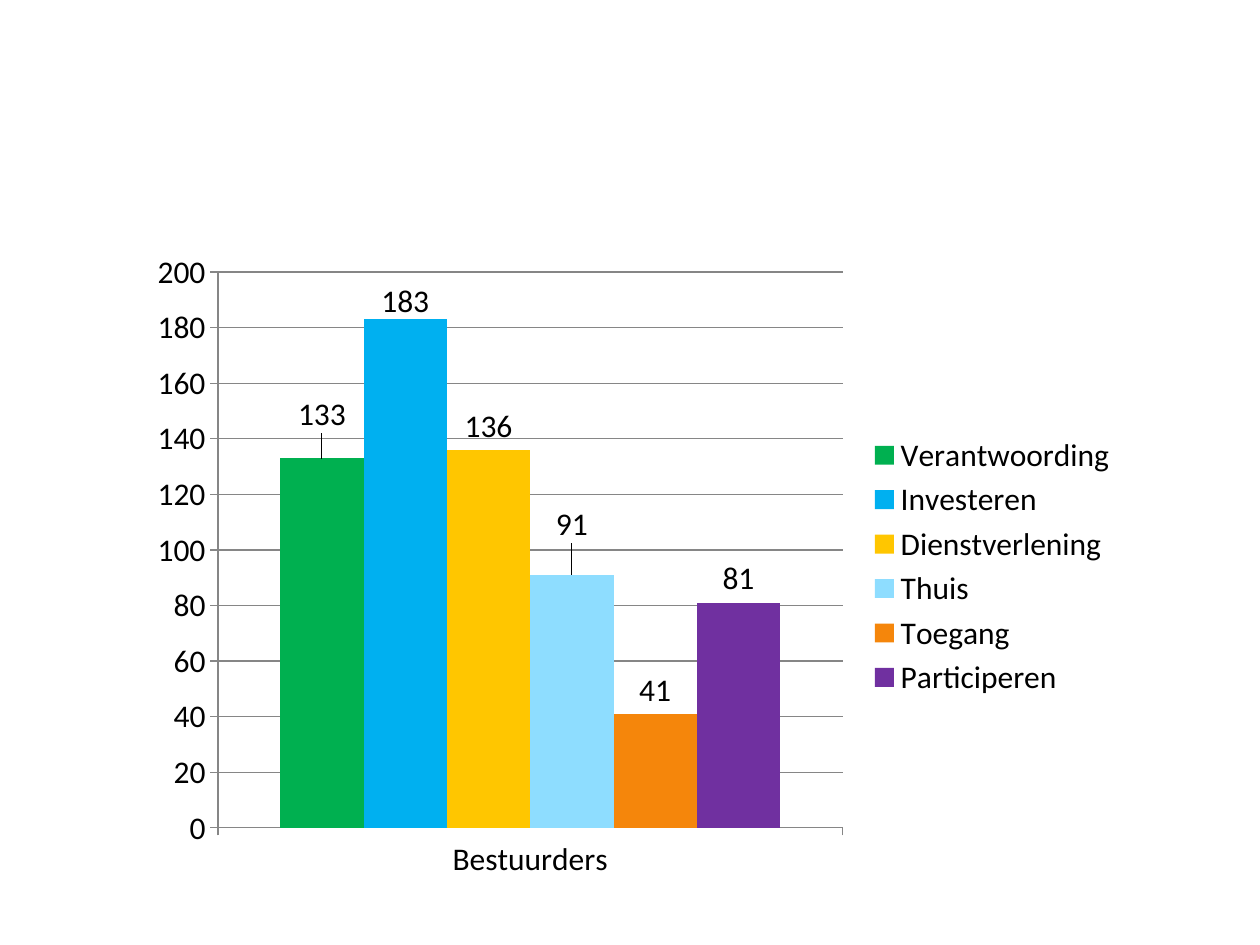
from lxml.etree import SubElement
from pptx import Presentation
from pptx.chart.data import CategoryChartData
from pptx.dml.color import RGBColor
from pptx.enum.chart import (
    XL_CHART_TYPE, XL_LABEL_POSITION, XL_LEGEND_POSITION, XL_TICK_MARK)
from pptx.oxml.ns import qn
from pptx.util import Inches, Pt

BLACK = RGBColor(0x00, 0x00, 0x00)
GRAY = RGBColor(0x86, 0x86, 0x86)
GREEN = RGBColor(0x00, 0xB0, 0x50)
BLUE = RGBColor(0x00, 0xB0, 0xF0)
YELLOW = RGBColor(0xFF, 0xC6, 0x00)
SKY = RGBColor(0x8E, 0xDD, 0xFF)
ORANGE = RGBColor(0xF5, 0x86, 0x0B)
PURPLE = RGBColor(0x70, 0x30, 0xA0)

# theme, score, bar colour, vertical label shift (share of chart height)
THEMES = [
    ("Verantwoording", 133, GREEN, -0.03),
    ("Investeren", 183, BLUE, 0.01),
    ("Dienstverlening", 136, YELLOW, 0),
    ("Thuis", 91, SKY, -0.04),
    ("Toegang", 41, ORANGE, 0),
    ("Participeren", 81, PURPLE, 0),
]


def add_layout(parent, index, **values):
    """Insert a manual chart layout as the given child of parent."""
    layout = parent.makeelement(qn("c:layout"))
    parent.insert(index, layout)
    manual = SubElement(layout, qn("c:manualLayout"))
    for tag, value in values.items():
        SubElement(manual, qn(f"c:{tag}")).set("val", str(value))


def add_chart(slide):
    data = CategoryChartData()
    data.categories = ["Bestuurders"]
    for name, score, _, _ in THEMES:
        data.add_series(name, [score])
    frame = slide.shapes.add_chart(
        XL_CHART_TYPE.COLUMN_CLUSTERED,
        Inches(1.1), Inches(1.9), Inches(7.87), Inches(5.19), data)
    chart = frame.chart
    chart.has_title = False
    chart.font.name = "Calibri"
    chart.font.size = Pt(18)
    chart.font.color.rgb = BLACK
    chart.has_legend = True
    chart.legend.position = XL_LEGEND_POSITION.RIGHT
    chart.legend.include_in_layout = False
    return chart


def style_line(line):
    line.color.rgb = GRAY
    line.width = Pt(0.75)


def style_axes(chart):
    for axis in (chart.category_axis, chart.value_axis):
        axis.major_tick_mark = XL_TICK_MARK.OUTSIDE
        axis.minor_tick_mark = XL_TICK_MARK.NONE
        style_line(axis.format.line)
    scale = chart.value_axis
    scale.minimum_scale = 0
    scale.maximum_scale = 200
    scale.major_unit = 20
    scale.has_major_gridlines = True
    style_line(scale.major_gridlines.format.line)


def style_bar(bar, color, shift):
    bar.format.fill.solid()
    bar.format.fill.fore_color.rgb = color
    bar.invert_if_negative = False
    labels = bar.data_labels
    labels.show_value = True
    labels.position = XL_LABEL_POSITION.OUTSIDE_END
    if shift:
        bar.points[0].data_label.position = XL_LABEL_POSITION.OUTSIDE_END
        label = bar._element.xpath(".//c:dLbl")[0]
        add_layout(label, 1, x=0, y=shift)


def style_plot(chart):
    plot = chart.plots[0]
    plot.gap_width = 150
    plot.overlap = 0
    plot.vary_by_categories = False
    for bar, (_, _, color, shift) in zip(plot.series, THEMES):
        style_bar(bar, color, shift)
    area = chart._chartSpace.chart.plotArea
    for old in area.findall(qn("c:layout")):
        area.remove(old)
    add_layout(area, 0, layoutTarget="inner", xMode="edge", yMode="edge",
               x=0.08, y=0.05, w=0.63, h=0.85)


def main():
    deck = Presentation()
    deck.slide_width = Inches(10)
    deck.slide_height = Inches(7.5)
    slide = deck.slides.add_slide(deck.slide_layouts[6])
    chart = add_chart(slide)
    style_axes(chart)
    style_plot(chart)
    deck.save("out.pptx")


if __name__ == "__main__":
    main()
